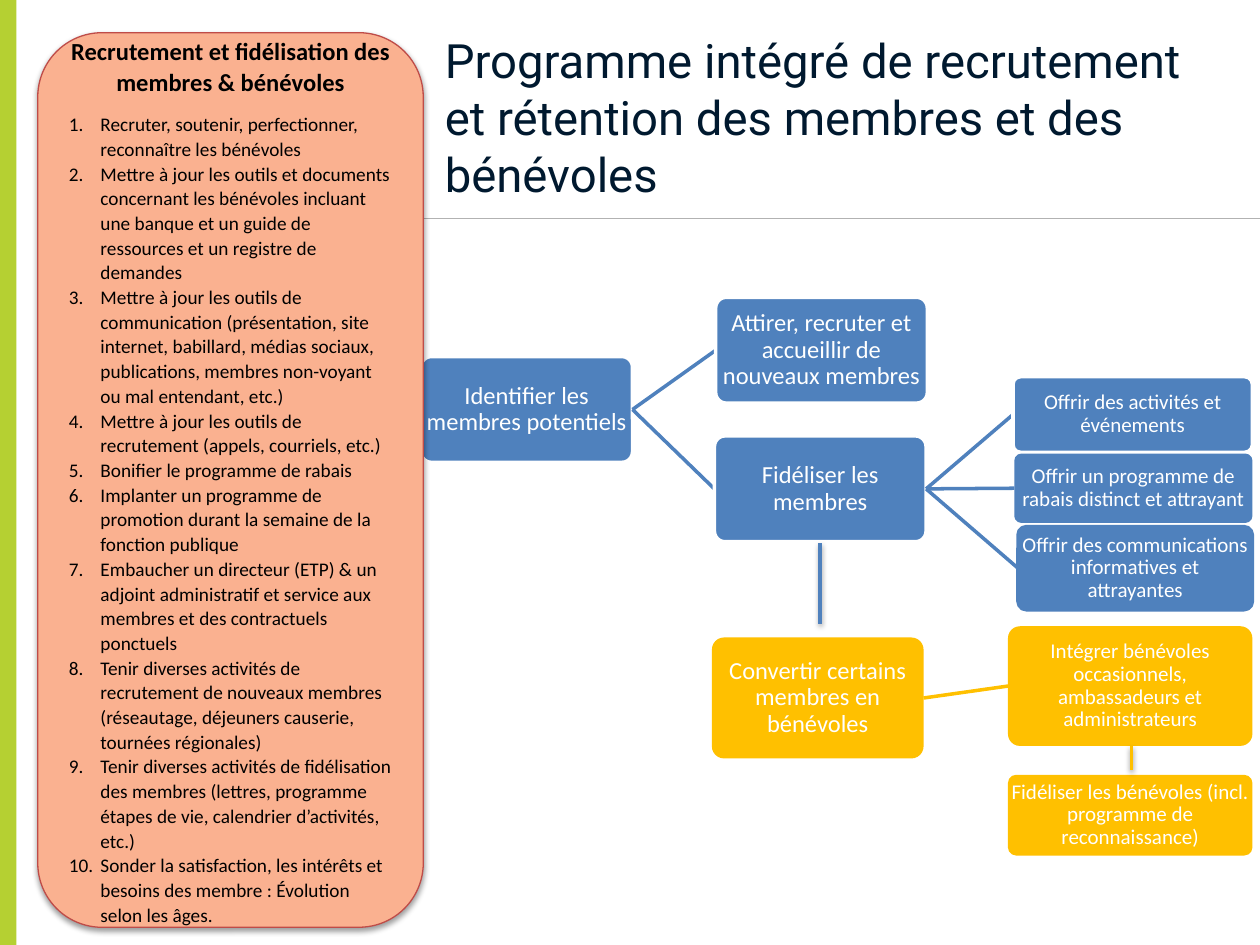
from dataclasses import dataclass

from lxml import etree
from pptx import Presentation
from pptx.dml.color import RGBColor
from pptx.enum.shapes import MSO_CONNECTOR, MSO_SHAPE
from pptx.enum.text import MSO_ANCHOR, PP_ALIGN
from pptx.oxml.ns import qn
from pptx.util import Inches, Pt

RECT = MSO_SHAPE.RECTANGLE
ROUNDED = MSO_SHAPE.ROUNDED_RECTANGLE
STRAIGHT = MSO_CONNECTOR.STRAIGHT
MIDDLE = MSO_ANCHOR.MIDDLE
LEFT, CENTER = PP_ALIGN.LEFT, PP_ALIGN.CENTER
LEFT_SITE, RIGHT_SITE = 1, 3
TITLE_ONLY = 5


@dataclass(frozen=True)
class Theme:
    title_font: str = "Roboto"
    body_font: str = "Calibri"
    title_size: float = 27
    heading_size: float = 14
    detail_size: float = 12
    list_size: float = 11
    navy: str = "00192F"
    green: str = "B5D032"
    rule: str = "B2B2B2"
    blue: str = "4F81BD"
    gold: str = "FFC000"
    salmon: str = "FAB190"
    red: str = "BF4C48"
    white: str = "FFFFFF"
    black: str = "000000"


THEME = Theme()

TITLE = "Programme intégré de recrutement et rétention des membres et des bénévoles"
PANEL_HEADING = "Recrutement et fidélisation des membres & bénévoles"
ACTIONS = [
    "Recruter, soutenir, perfectionner, reconnaître les bénévoles",
    "Mettre à jour les outils et documents concernant les bénévoles incluant une banque "
    "et un guide de ressources et un registre de demandes",
    "Mettre à jour les outils de communication (présentation, site internet, babillard, "
    "médias sociaux, publications, membres non-voyant ou mal entendant, etc.)",
    "Mettre à jour les outils de recrutement (appels, courriels, etc.)",
    "Bonifier le programme de rabais",
    "Implanter un programme de promotion durant la semaine de la fonction publique",
    "Embaucher un directeur (ETP) & un adjoint administratif et service aux membres "
    "et des contractuels ponctuels",
    "Tenir diverses activités de recrutement de nouveaux membres (réseautage, "
    "déjeuners causerie, tournées régionales)",
    "Tenir diverses activités de fidélisation des membres (lettres, programme étapes "
    "de vie, calendrier d’activités, etc.)",
    "Sonder la satisfaction, les intérêts et besoins des membre : Évolution selon les âges.",
]

BLUE, GOLD, WHITE = THEME.blue, THEME.gold, THEME.white
MAIN, DETAIL = THEME.heading_size, THEME.detail_size
STEPS = [
    ("identifier", None, (0, 0.47, 1.68, 0.84), BLUE, WHITE, MAIN,
     "Identifier les membres potentiels"),
    ("attirer", "identifier", (2.34, 0, 1.68, 0.84), BLUE, WHITE, MAIN,
     "Attirer, recruter et accueillir de nouveaux membres"),
    ("fidéliser", "identifier", (2.33, 1.1, 1.68, 0.84), BLUE, WHITE, MAIN,
     "Fidéliser les membres"),
    ("activités", "fidéliser", (4.7, 0.63, 1.9, 0.6), BLUE, WHITE, DETAIL,
     "Offrir des activités et événements"),
    ("rabais", "fidéliser", (4.71, 1.24, 1.89, 0.55), BLUE, None, DETAIL,
     "Offrir un programme de rabais distinct et attrayant"),
    ("communications", "fidéliser", (4.74, 1.82, 1.86, 0.66), BLUE, BLUE, DETAIL,
     "Offrir des communications informatives et attrayantes"),
    ("convertir", None, (2.31, 2.7, 1.68, 0.96), GOLD, None, MAIN,
     "Convertir certains membres en bénévoles"),
    ("intégrer", "convertir", (4.66, 2.61, 1.94, 0.95), GOLD, None, DETAIL,
     "Intégrer bénévoles occasionnels, ambassadeurs et administrateurs"),
    ("reconnaître", None, (4.66, 3.79, 1.94, 0.64), GOLD, None, DETAIL,
     "Fidéliser les bénévoles (incl. programme de reconnaissance)"),
]
DESCENTS = [(3.17, 1.95, 2.59, BLUE), (5.64, 3.56, 3.75, GOLD)]


def rgb(color):
    return RGBColor.from_string(color)


def style_text(paragraph, font, size, color, align, bold=False, spacing=None, after=0):
    paragraph.alignment = align
    paragraph.space_after = Pt(after)
    if spacing:
        paragraph.line_spacing = spacing
    for run in paragraph.runs:
        run.font.name = font
        run.font.size = Pt(size)
        run.font.bold = bold
        run.font.color.rgb = rgb(color)


def add_block(slide, preset, box, fill, outline=None, weight=2):
    block = slide.shapes.add_shape(preset, *map(Inches, box))
    block.shadow.inherit = False
    block.fill.solid()
    block.fill.fore_color.rgb = rgb(fill)
    if outline:
        block.line.color.rgb = rgb(outline)
        block.line.width = Pt(weight)
    else:
        block.line.fill.background()
    return block


def add_line(slide, start, end, color, weight=2):
    line = slide.shapes.add_connector(STRAIGHT, *map(Inches, (*start, *end)))
    line.line.color.rgb = rgb(color)
    line.line.width = Pt(weight)
    etree.SubElement(line._element.spPr, qn("a:effectLst"))
    return line


def cast_shadow(part):
    effects = part._element.spPr.find(qn("a:effectLst"))
    shadow = etree.SubElement(effects, qn("a:outerShdw"), blurRad=str(Pt(3.1)),
                              dist=str(Pt(1.6)), dir="5400000", rotWithShape="0")
    tint = etree.SubElement(shadow, qn("a:srgbClr"), val=THEME.black)
    etree.SubElement(tint, qn("a:alpha"), val="38000")


def number_item(paragraph):
    props = paragraph._p.get_or_add_pPr()
    props.set("marL", str(Inches(0.25)))
    props.set("indent", str(-Inches(0.25)))
    etree.SubElement(props, qn("a:buFont"), typeface="+mj-lt")
    etree.SubElement(props, qn("a:buAutoNum"), type="arabicPeriod")


def build_header(slide, box):
    add_block(slide, RECT, (0, 0, 0.13, 7.5), THEME.green)
    add_line(slide, (0.44, 1.73), (10, 1.73), THEME.rule, 0.5)
    title = slide.shapes.title
    title.left, title.top, title.width, title.height = map(Inches, box)
    title.text_frame.text = TITLE
    title.text_frame.vertical_anchor = MIDDLE
    style_text(title.text_frame.paragraphs[0], THEME.title_font, THEME.title_size,
               THEME.navy, LEFT)


def build_diagram(slide, box):
    left, top = box[:2]
    steps = {}
    for key, parent, (x, y, width, height), fill, outline, size, label in STEPS:
        link = add_line(slide, (0, 0), (1, 1), fill) if parent else None
        step = add_block(slide, ROUNDED, (left + x, top + y, width, height), fill, outline)
        step.adjustments[0] = 0.1
        frame = step.text_frame
        frame.word_wrap = True
        frame.vertical_anchor = MIDDLE
        frame.margin_left = frame.margin_right = Inches(0.01)
        frame.margin_top = frame.margin_bottom = Inches(0.01)
        frame.text = label
        style_text(frame.paragraphs[0], THEME.body_font, size, WHITE, CENTER, spacing=0.9)
        if link:
            link.begin_connect(steps[parent], RIGHT_SITE)
            link.end_connect(step, LEFT_SITE)
        steps[key] = step
    for x, start, end, color in DESCENTS:
        cast_shadow(add_line(slide, (left + x, top + start), (left + x, top + end), color))


def build_panel(slide, box):
    panel = add_block(slide, ROUNDED, box, THEME.salmon, THEME.red, 0.75)
    cast_shadow(panel)
    frame = panel.text_frame
    frame.word_wrap = True
    frame.vertical_anchor = MIDDLE
    frame.text = PANEL_HEADING
    style_text(frame.paragraphs[0], THEME.body_font, THEME.heading_size, THEME.black,
               CENTER, bold=True, spacing=1.07, after=8)
    for action in ACTIONS:
        item = frame.add_paragraph()
        item.text = action
        number_item(item)
        style_text(item, THEME.body_font, THEME.list_size, THEME.black, LEFT,
                   spacing=1.07, after=8 if action == ACTIONS[-1] else 0)


def main():
    deck = Presentation()
    deck.slide_width, deck.slide_height = Inches(10), Inches(7.5)
    slide = deck.slides.add_slide(deck.slide_layouts[TITLE_ONLY])
    build_header(slide, (3.43, 0.3, 6.16, 1.25))
    build_diagram(slide, (3.34, 2.36, 6.6, 4.43))
    build_panel(slide, (0.3, 0.26, 3.06, 7.1))
    deck.save("out.pptx")


if __name__ == "__main__":
    main()
